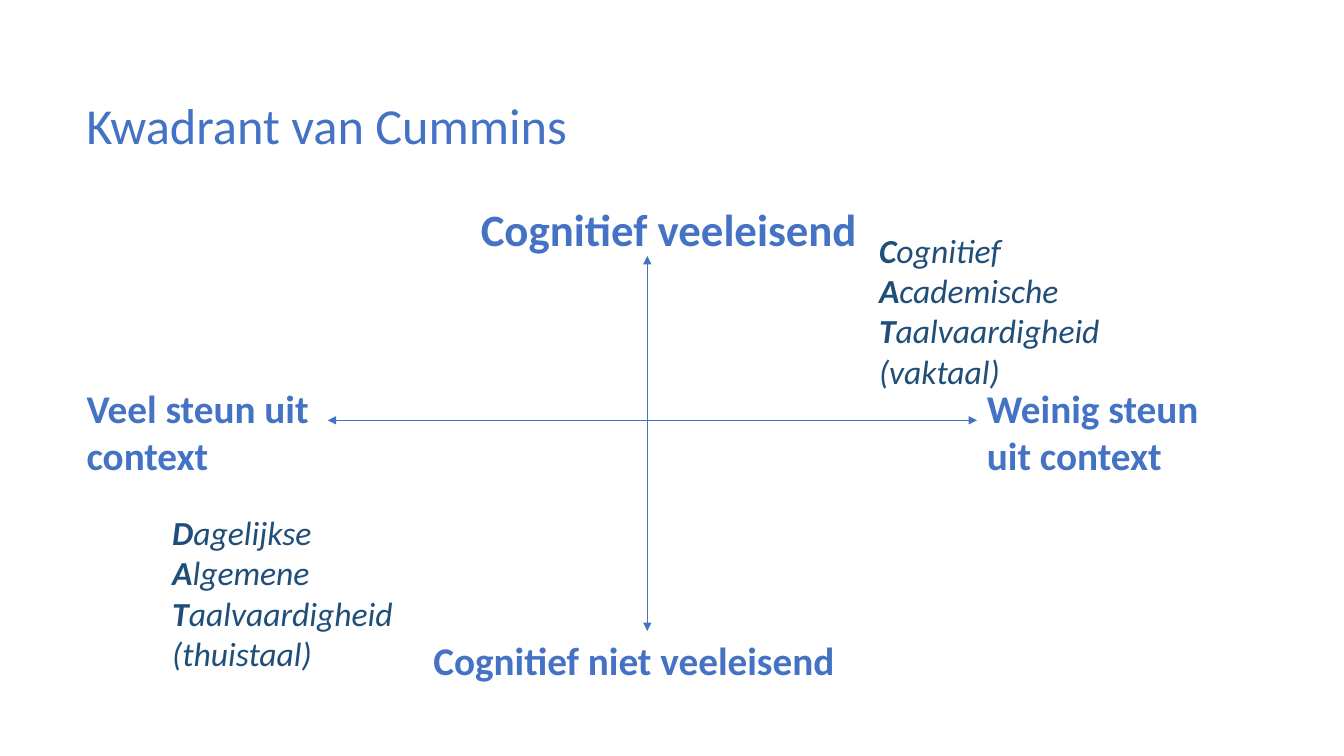
from lxml.etree import SubElement
from pptx import Presentation
from pptx.dml.color import RGBColor
from pptx.enum.shapes import MSO_CONNECTOR
from pptx.enum.text import MSO_AUTO_SIZE
from pptx.oxml.ns import qn
from pptx.util import Inches, Pt

COLORS = {"blue": "4472C4", "navy": "1F4E79"}
FONT = "Calibri"


def add_run(paragraph, text, size=28, color="blue", bold=False, italic=False):
    """Append one formatted run to a paragraph."""
    run = paragraph.add_run()
    run.text = text
    font = run.font
    font.name, font.size = FONT, Pt(size)
    font.bold, font.italic = bold, italic
    font.color.rgb = RGBColor.from_string(COLORS[color])


def add_box(slide, left, top, width, height, grow=True):
    """Add an empty wrapping text box."""
    box = slide.shapes.add_textbox(Inches(left), Inches(top), Inches(width), Inches(height))
    box.text_frame.word_wrap = True
    box.text_frame.auto_size = MSO_AUTO_SIZE.SHAPE_TO_FIT_TEXT if grow else MSO_AUTO_SIZE.NONE
    return box


def add_title(slide, text, left, top, width, height):
    """Add the slide title at the top of the body area."""
    box = add_box(slide, left, top, width, height, grow=False)
    paragraph = box.text_frame.paragraphs[0]
    paragraph.line_spacing = 0.9
    add_run(paragraph, text, size=36)


def add_label(slide, text, left, top, width, height, size=28):
    """Add the bold label at one end of an axis."""
    box = add_box(slide, left, top, width, height)
    add_run(box.text_frame.paragraphs[0], text, size=size, bold=True)
    return box


def add_skill(slide, words, note, left, top, width, height):
    """Add a language skill with its initials in bold and a note below."""
    frame = add_box(slide, left, top, width, height).text_frame
    paragraph = frame.paragraphs[0]
    for index, word in enumerate(words):
        ending = " " if index < len(words) - 1 else ""
        add_run(paragraph, word[0], size=24, color="navy", bold=True, italic=True)
        add_run(paragraph, word[1:] + ending, size=24, color="navy", italic=True)
    add_run(frame.add_paragraph(), note, size=24, color="navy", italic=True)


def add_axis(slide, start_x, start_y, end_x, end_y):
    """Add a thin line with an arrowhead at both ends."""
    axis = slide.shapes.add_connector(
        MSO_CONNECTOR.STRAIGHT, Inches(start_x), Inches(start_y), Inches(end_x), Inches(end_y))
    axis.line.color.rgb = RGBColor.from_string(COLORS["blue"])
    axis.line.width = Pt(0.5)
    line = axis.line._get_or_add_ln()
    for tag in ("a:headEnd", "a:tailEnd"):
        SubElement(line, qn(tag), type="triangle")
    SubElement(axis._element.spPr, qn("a:effectLst"))
    return axis


def add_quadrant(slide, left, top, width, height):
    """Place the two axes, their four labels and the two skills."""
    center_x = left + 5.66
    vertical = add_axis(slide, center_x, top + 0.59, center_x, top + 4.32)
    add_axis(slide, left + 2.49, top + 2.22, left + 8.93, top + 2.22)
    add_label(slide, "Cognitief veeleisend", left + 3.91, top, 4.39, 0.64, size=32)
    add_label(slide, "Veel steun uit context", left, top + 1.81, 2.85, 1.04)
    bottom = add_label(slide, "Cognitief niet veeleisend",
                       center_x - 2.22, top + height - 0.57, 4.44, 0.57)
    vertical.end_connect(bottom, 0)
    add_label(slide, "Weinig steun uit context", left + width - 2.47, top + 1.81, 2.47, 1.04)
    add_skill(slide, ["Dagelijkse", "Algemene", "Taalvaardigheid"], "(thuistaal)",
              left + 0.85, top + 3.08, 2.4, 1.72)
    add_skill(slide, ["Cognitief", "Academische", "Taalvaardigheid"], "(vaktaal)",
              left + 7.86, top + 0.28, 2.68, 1.72)


def main():
    """Build and save the slide."""
    presentation = Presentation()
    presentation.slide_width, presentation.slide_height = Inches(13.33), Inches(7.5)
    slide = presentation.slides.add_slide(presentation.slide_layouts[6])
    add_title(slide, "Kwadrant van Cummins", 0.76, 0.95, 11.5, 6.34)
    add_quadrant(slide, 0.76, 1.95, 11.4, 4.88)
    presentation.save("out.pptx")


if __name__ == "__main__":
    main()
